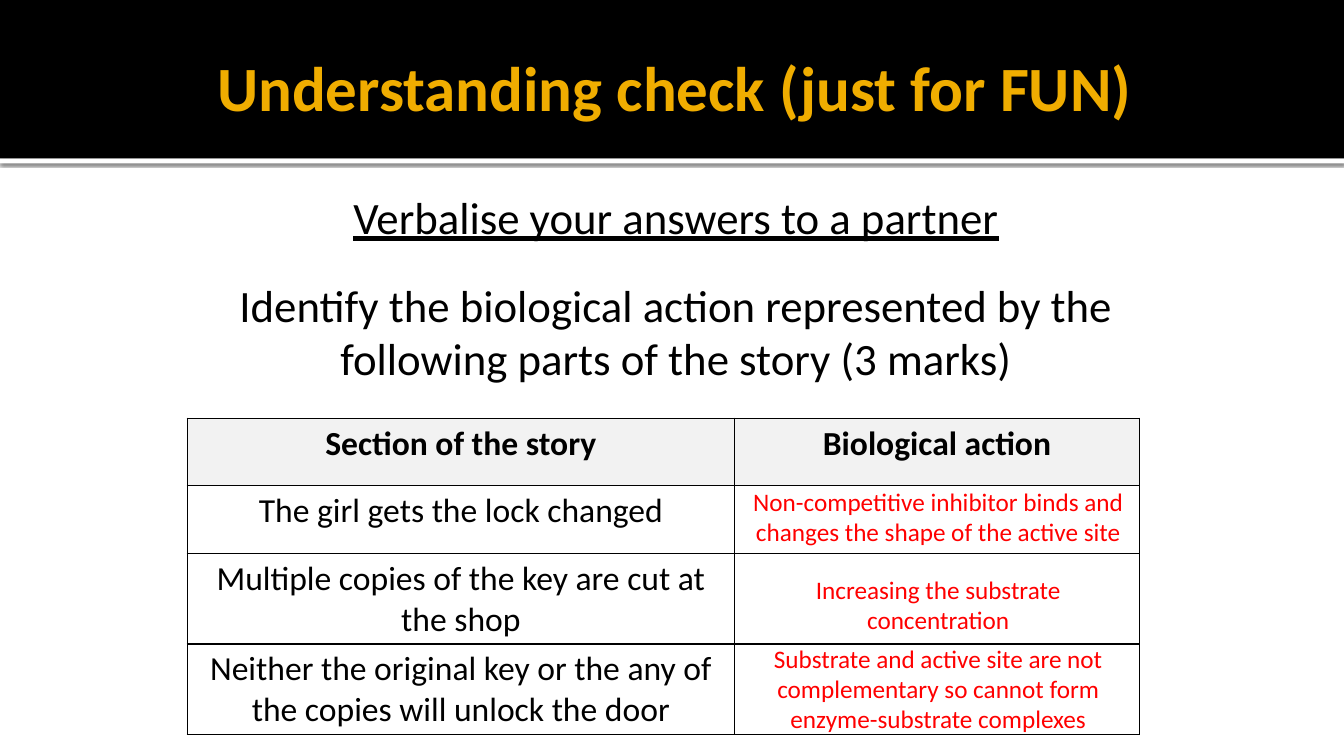
from lxml.etree import SubElement
from pptx import Presentation
from pptx.dml.color import RGBColor
from pptx.enum.shapes import MSO_SHAPE
from pptx.enum.text import MSO_ANCHOR, MSO_AUTO_SIZE, PP_ALIGN
from pptx.oxml.ns import qn
from pptx.util import Cm, Pt

BLACK = RGBColor(0x00, 0x00, 0x00)
WHITE = RGBColor(0xFF, 0xFF, 0xFF)
GOLD = RGBColor(0xF0, 0xAD, 0x00)
RED = RGBColor(0xFF, 0x00, 0x00)
LIGHT_GREY = RGBColor(0xF2, 0xF2, 0xF2)

WIDTH, HEIGHT = 33.87, 19.05
BAND_HEIGHT = 3.99
CONTENT_LEFT, TABLE_TOP = 4.72, 10.54
STORY_WIDTH, ACTION_WIDTH = 13.79, 10.21

STORY_ROWS = [
    "Section of the story",
    "The girl gets the lock changed",
    "Multiple copies of the key are cut at the shop",
    "Neither the original key or the any of the copies will unlock the door",
]
ROW_HEIGHTS = [1.7, 1.7, 1.7, 2.08]

# top, height, text
ANSWERS = [
    (12.12, 1.8, "Non-competitive inhibitor binds and changes the shape of the active site"),
    (14.33, 1.8, "Increasing the substrate concentration"),
    (16.08, 2.57, "Substrate and active site are not complementary "
                  "so cannot form enzyme-substrate complexes"),
]


class SlideBuilder:
    """Draws on one slide in one font; lengths are in centimetres."""

    font = "Calibri"

    def __init__(self, slide):
        self.s = slide

    def add_text(self, p, text, size, color=BLACK, bold=False, underline=False):
        p.alignment = PP_ALIGN.CENTER
        r = p.add_run()
        r.text = text
        r.font.name = self.font
        r.font.size = Pt(size)
        r.font.color.rgb = color
        r.font.bold = bold
        r.font.underline = underline

    def rect(self, left, top, width, height, color):
        sp = self.s.shapes.add_shape(
            MSO_SHAPE.RECTANGLE, Cm(left), Cm(top), Cm(width), Cm(height))
        sp.shadow.inherit = False
        sp.fill.solid()
        sp.fill.fore_color.rgb = color
        sp.line.fill.background()
        return sp

    def drop_shadow(self, sp, blur, distance, opacity):
        """Add a black shadow straight below; blur and distance in points."""
        effects = sp._element.spPr.find(qn("a:effectLst"))
        shadow = SubElement(effects, qn("a:outerShdw"), blurRad=str(Pt(blur)),
                            dist=str(Pt(distance)), dir="5400000", rotWithShape="0")
        color = SubElement(shadow, qn("a:srgbClr"), val=str(BLACK))
        SubElement(color, qn("a:alpha"), val=str(opacity * 1000))

    def text_box(self, left, top, width, height, insets=(0.25, 0.13, 0.25, 0.13)):
        """Return the text frame; insets are left, top, right, bottom."""
        sp = self.s.shapes.add_textbox(Cm(left), Cm(top), Cm(width), Cm(height))
        tf = sp.text_frame
        tf.word_wrap = True
        tf.margin_left, tf.margin_top, tf.margin_right, tf.margin_bottom = map(Cm, insets)
        return tf

    def table(self, left, top, widths, heights):
        tbl = self.s.shapes.add_table(
            len(heights), len(widths), Cm(left), Cm(top),
            Cm(sum(widths)), Cm(sum(heights))).table
        for column, width in zip(tbl.columns, widths):
            column.width = Cm(width)
        for row, height in zip(tbl.rows, heights):
            row.height = Cm(height)
        return tbl

    def style_cell(self, cell, fill):
        tcPr = cell._tc.get_or_add_tcPr()
        for side in ("lnL", "lnR", "lnT", "lnB"):
            ln = SubElement(tcPr, qn("a:" + side), w=str(Pt(1)))
            SubElement(SubElement(ln, qn("a:solidFill")), qn("a:srgbClr"), val=str(BLACK))
        cell.fill.solid()
        cell.fill.fore_color.rgb = fill


def main():
    prs = Presentation()
    prs.slide_width, prs.slide_height = Cm(WIDTH), Cm(HEIGHT)
    b = SlideBuilder(prs.slides.add_slide(prs.slide_layouts[6]))

    strip = b.rect(0, BAND_HEIGHT, WIDTH, 0.13, WHITE)
    b.drop_shadow(strip, blur=2.5, distance=0.8, opacity=60)
    b.rect(0, 0, WIDTH, BAND_HEIGHT, BLACK)

    tf = b.text_box(1.7, 0.43, 30.48, 3.48, (0.25, 0.13, 0.13, 0.13))
    tf.vertical_anchor = MSO_ANCHOR.MIDDLE
    b.add_text(tf.paragraphs[0], "Understanding check (just for FUN)", 45, GOLD, bold=True)

    tf = b.text_box(CONTENT_LEFT, 4.52, 24.41, 5.59, (0.48, 0.25, 0.25, 0.13))
    b.add_text(tf.paragraphs[0], "Verbalise your answers to a partner", 32, underline=True)
    p = tf.add_paragraph()
    p.space_before = Pt(24.4)
    b.add_text(p, "Identify the biological action represented by the "
                  "following parts of the story (3 marks)", 32)

    tbl = b.table(CONTENT_LEFT, TABLE_TOP, [STORY_WIDTH, ACTION_WIDTH], ROW_HEIGHTS)
    for i, story in enumerate(STORY_ROWS):
        header = i == 0
        for cell in tbl.rows[i].cells:
            b.style_cell(cell, LIGHT_GREY if header else WHITE)
        b.add_text(tbl.cell(i, 0).text_frame.paragraphs[0], story, 24, bold=header)
    b.add_text(tbl.cell(0, 1).text_frame.paragraphs[0], "Biological action", 24, bold=True)

    for top, height, answer in ANSWERS:
        tf = b.text_box(CONTENT_LEFT + STORY_WIDTH + 0.03, top, ACTION_WIDTH, height)
        tf.auto_size = MSO_AUTO_SIZE.SHAPE_TO_FIT_TEXT
        b.add_text(tf.paragraphs[0], answer, 18, RED)

    prs.save("out.pptx")


if __name__ == "__main__":
    main()
